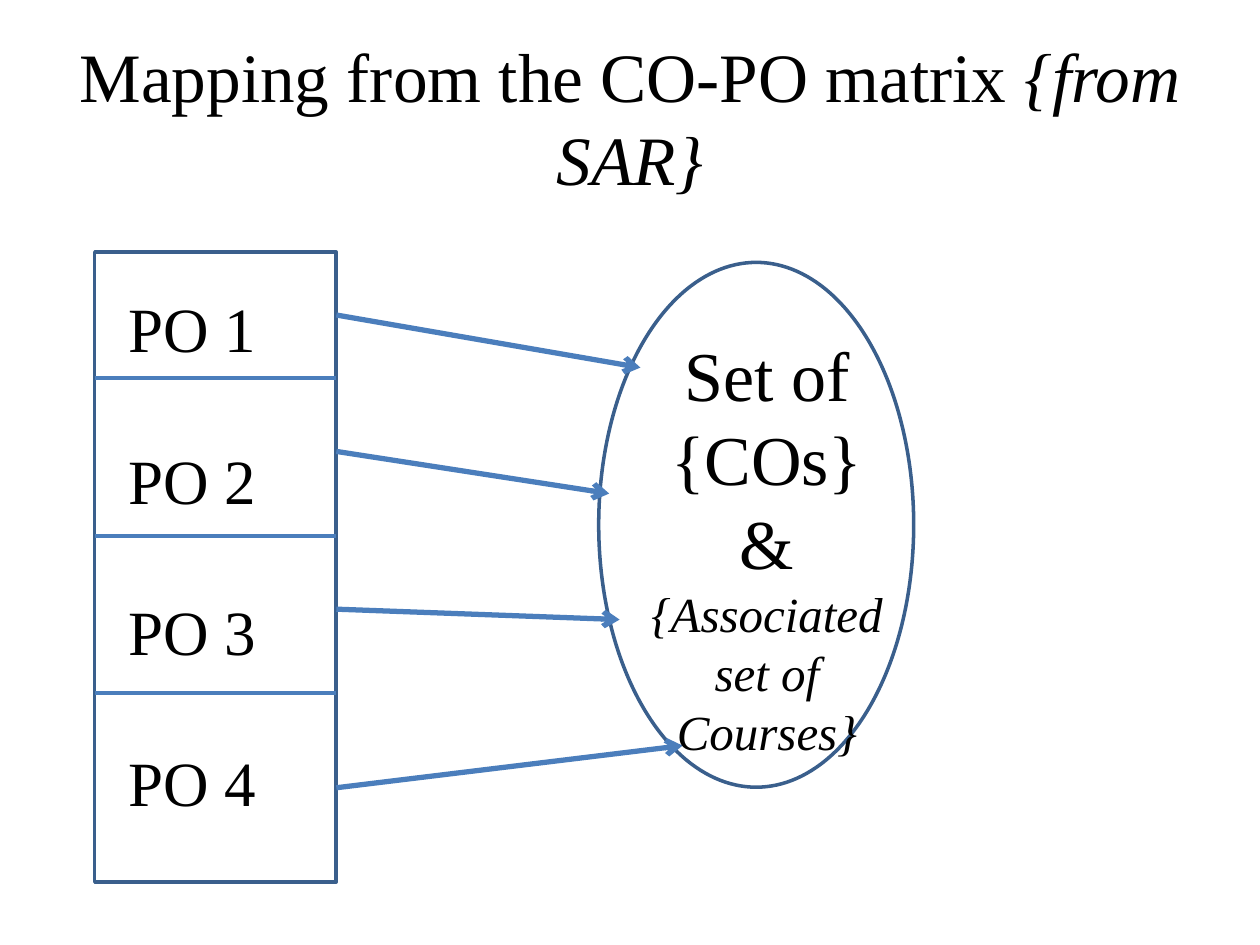
"""Build the slide that maps programme outcomes to course outcomes."""
from pptx import Presentation
from pptx.dml.color import RGBColor as RGB
from pptx.enum.shapes import MSO_CONNECTOR as Conn, MSO_SHAPE as Shape
from pptx.enum.text import MSO_ANCHOR as Anchor, PP_ALIGN as Align
from pptx.oxml.ns import qn
from pptx.util import Cm, Pt
from lxml.etree import SubElement as Sub


def ink(fmt, code):
    fmt.rgb = RGB.from_string(code)


def write(box, paras, align, gap=0):
    frame = slide.shapes.add_textbox(*map(Cm, box)).text_frame
    frame.word_wrap = True
    for i, runs in enumerate(paras):
        para = frame.add_paragraph() if i else frame.paragraphs[0]
        look = {"alignment": align, "line_spacing": Pt(runs[0][1] * 1.2),
                "space_before": Pt(gap if i else 0)}
        for key, val in look.items():
            setattr(para, key, val)
        for text, size, slant in runs:
            run = para.add_run()
            run.text = text
            face = {"name": "Times New Roman", "size": Pt(size), "italic": slant}
            for key, val in face.items():
                setattr(run.font, key, val)
            ink(run.font.color, "000000")
    return frame


deck = Presentation()
deck.slide_width, deck.slide_height = Cm(25.4), Cm(19.05)
slide = deck.slides.add_slide(deck.slide_layouts[6])

left, right, top = 1.91, 6.78, 5.08
forms = [(Shape.RECTANGLE, (left, top, right - left, 12.7)),
         (Shape.OVAL, (12.07, 5.29, 6.35, 10.58))]
for kind, box in forms:
    form = slide.shapes.add_shape(kind, *map(Cm, box))
    form.shadow.inherit = False
    form.fill.solid()
    ink(form.fill.fore_color, "FFFFFF")
    ink(form.line.color, "3A5F8C")
    form.line.width = Pt(2)

rules = [(left, y, right, y, 2.25, False) for y in (7.62, 10.8, 13.97)]
ends = [(6.35, 12.91, 7.41), (9.1, 12.28, 9.95),
        (12.28, 12.49, 12.49), (15.88, 13.76, 15.03)]
arrows = [(right, y, x2, y2, 3, True) for y, x2, y2 in ends]
for *spots, width, head in rules + arrows:
    line = slide.shapes.add_connector(Conn.STRAIGHT, *map(Cm, spots))
    ink(line.line.color, "4B7EBC")
    line.line.width = Pt(width)
    if head:
        Sub(line.line.color and line.line._get_or_add_ln(), qn("a:tailEnd"), type="arrow")
    Sub(line._element.spPr, qn("a:effectLst"))

title = write((1.27, 0.76, 22.86, 3.18),
              [[("Mapping from the CO-PO matrix ", 39.6, False),
                ("{from SAR}", 39.6, True)]], Align.CENTER)
title.vertical_anchor = Anchor.MIDDLE
write((2.34, 5.72, 4.01, 11.02),
      [[(f"PO {n}", 36, False)] for n in range(1, 5)], Align.LEFT, 43.2)
write((12.5, 6.56, 5.92, 8.97),
      [[("Set of {COs}", 40, False)], [("&", 40, False)],
       [("{Associated set of Courses}", 28, True)]], Align.CENTER)

deck.save("out.pptx")
